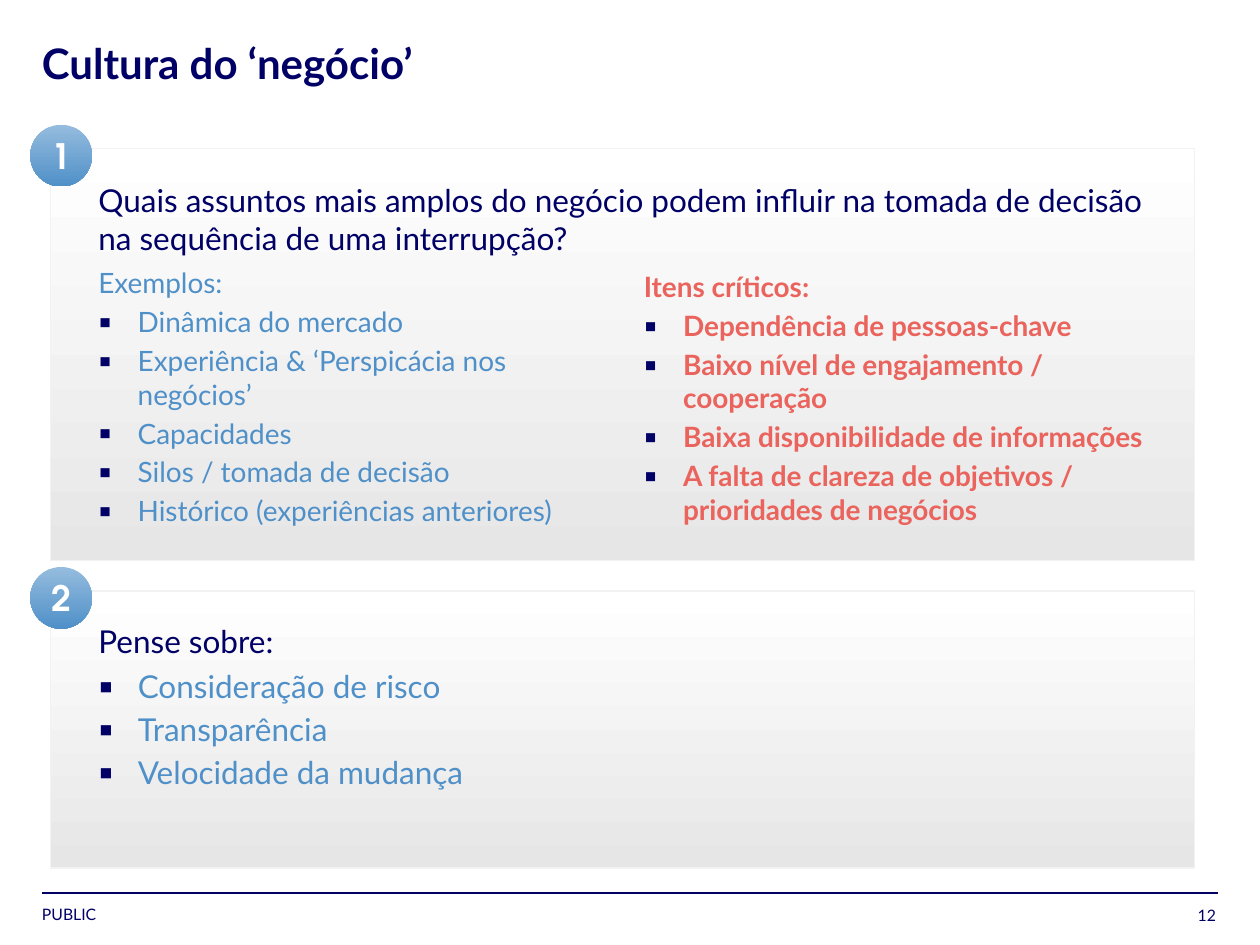
from lxml.etree import SubElement
from pptx import Presentation
from pptx.dml.color import RGBColor
from pptx.enum.shapes import MSO_CONNECTOR, MSO_SHAPE
from pptx.enum.text import MSO_ANCHOR, PP_ALIGN
from pptx.oxml.ns import qn
from pptx.util import Pt

COLORS = {
    "navy": "000066", "blue": "4F90C8", "sky": "95BCDE", "red": "EA635C",
    "white": "FFFFFF", "grey": "E6E6E6", "border": "F2F2F2",
}


def rgb(name):
    return RGBColor.from_string(COLORS[name])


class Deck:
    """Holds the style and the current slide, and draws each kind of element."""

    font = "Lato"
    badge_font = "TeX Gyre Adventor"
    indent = Pt(22.5)

    def __init__(self, width, height):
        self.prs = Presentation()
        self.prs.slide_width, self.prs.slide_height = Pt(width), Pt(height)
        self.s = self.prs.slides.add_slide(self.prs.slide_layouts[6])

    def bullet(self, p):
        pPr = p._p.get_or_add_pPr()
        pPr.set("marL", str(self.indent))
        pPr.set("indent", str(-self.indent))
        clr = SubElement(pPr, qn("a:buClr"))
        SubElement(clr, qn("a:srgbClr"), val=COLORS["navy"])
        SubElement(pPr, qn("a:buSzPct"), val="120000")
        SubElement(pPr, qn("a:buFont"), typeface=self.font)
        SubElement(pPr, qn("a:buChar"), char="▪")

    def fill_text(self, tf, lines, size, color, bold=False, font=None,
                  align=PP_ALIGN.LEFT, after=0, plain=1):
        tf.margin_left = tf.margin_top = tf.margin_right = tf.margin_bottom = 0
        tf.text = "\n".join(lines)
        for i, p in enumerate(tf.paragraphs):
            p.alignment = align
            p.space_after = Pt(after)
            if i >= plain:
                self.bullet(p)
            for r in p.runs:
                r.font.name, r.font.size = font or self.font, Pt(size)
                r.font.bold, r.font.color.rgb = bold, rgb(color)

    def text(self, x, y, w, h, lines, size, color="navy", wrap=True,
             anchor=MSO_ANCHOR.TOP, **style):
        tf = self.s.shapes.add_textbox(Pt(x), Pt(y), Pt(w), Pt(h)).text_frame
        tf.word_wrap, tf.vertical_anchor = wrap, anchor
        self.fill_text(tf, lines, size, color, **style)
        return tf

    def gradient_shape(self, kind, x, y, w, h, colors):
        sp = self.s.shapes.add_shape(kind, Pt(x), Pt(y), Pt(w), Pt(h))
        sp.shadow.inherit = False
        sp.fill.gradient()
        sp.fill.gradient_angle = 270
        for stop, position, color in zip(sp.fill.gradient_stops, (0, 1), colors):
            stop.position, stop.color.rgb = position, rgb(color)
        return sp

    def panel(self, y, h):
        sp = self.gradient_shape(MSO_SHAPE.RECTANGLE, 28.8, y, 653.76, h, ("white", "grey"))
        sp.line.color.rgb, sp.line.width = rgb("border"), Pt(0.75)

    def badge(self, y, number):
        sp = self.gradient_shape(MSO_SHAPE.OVAL, 17.3, y, 35.3, 35.3, ("sky", "blue"))
        sp.line.fill.background()
        sp.text_frame.vertical_anchor = MSO_ANCHOR.MIDDLE
        self.fill_text(sp.text_frame, [number], 20, "white", bold=True,
                       font=self.badge_font, align=PP_ALIGN.CENTER)

    def rule(self, x1, x2, y):
        cx = self.s.shapes.add_connector(MSO_CONNECTOR.STRAIGHT, Pt(x1), Pt(y), Pt(x2), Pt(y))
        cx.line.color.rgb, cx.line.width = rgb("navy"), Pt(1)
        SubElement(cx._element.spPr, qn("a:effectLst"))


def main():
    d = Deck(720, 540)
    d.rule(24, 696, 510.5)
    d.text(24, 517, 92, 11, ["PUBLIC"], 9, wrap=False)
    d.text(657.4, 517, 37.4, 11.5, ["12"], 9, anchor=MSO_ANCHOR.BOTTOM, align=PP_ALIGN.RIGHT)
    title = d.text(24, 24.5, 602.6, 28, ["Cultura do ‘negócio’"], 24, bold=True)
    title.paragraphs[0].line_spacing = 0.9

    d.panel(85, 235.4)
    d.text(56.2, 103.7, 599, 50.4, [
        "Quais assuntos mais amplos do negócio podem influir na tomada de decisão "
        "na sequência de uma interrupção?"], 18, after=3)
    d.text(56.2, 152, 299.5, 152, [
        "Exemplos:",
        "Dinâmica do mercado",
        "Experiência & ‘Perspicácia nos negócios’",
        "Capacidades",
        "Silos / tomada de decisão",
        "Histórico (experiências anteriores)",
    ], 16, "blue", after=3)
    d.badge(71.3, "1")

    d.panel(337.7, 158.4)
    d.text(56.2, 355.7, 599, 27.4, ["Pense sobre:"], 18, after=3)
    d.text(56.2, 380.9, 599, 98, [
        "Consideração de risco",
        "Transparência",
        "Velocidade da mudança",
    ], 18, "blue", after=3, plain=0)
    d.badge(324, "2")

    d.text(367.9, 154.1, 299.5, 152, [
        "Itens críticos:",
        "Dependência de pessoas-chave",
        "Baixo nível de engajamento / cooperação",
        "Baixa disponibilidade de informações",
        "A falta de clareza de objetivos / prioridades de negócios",
    ], 16, "red", bold=True, after=3)
    d.prs.save("out.pptx")


if __name__ == "__main__":
    main()
